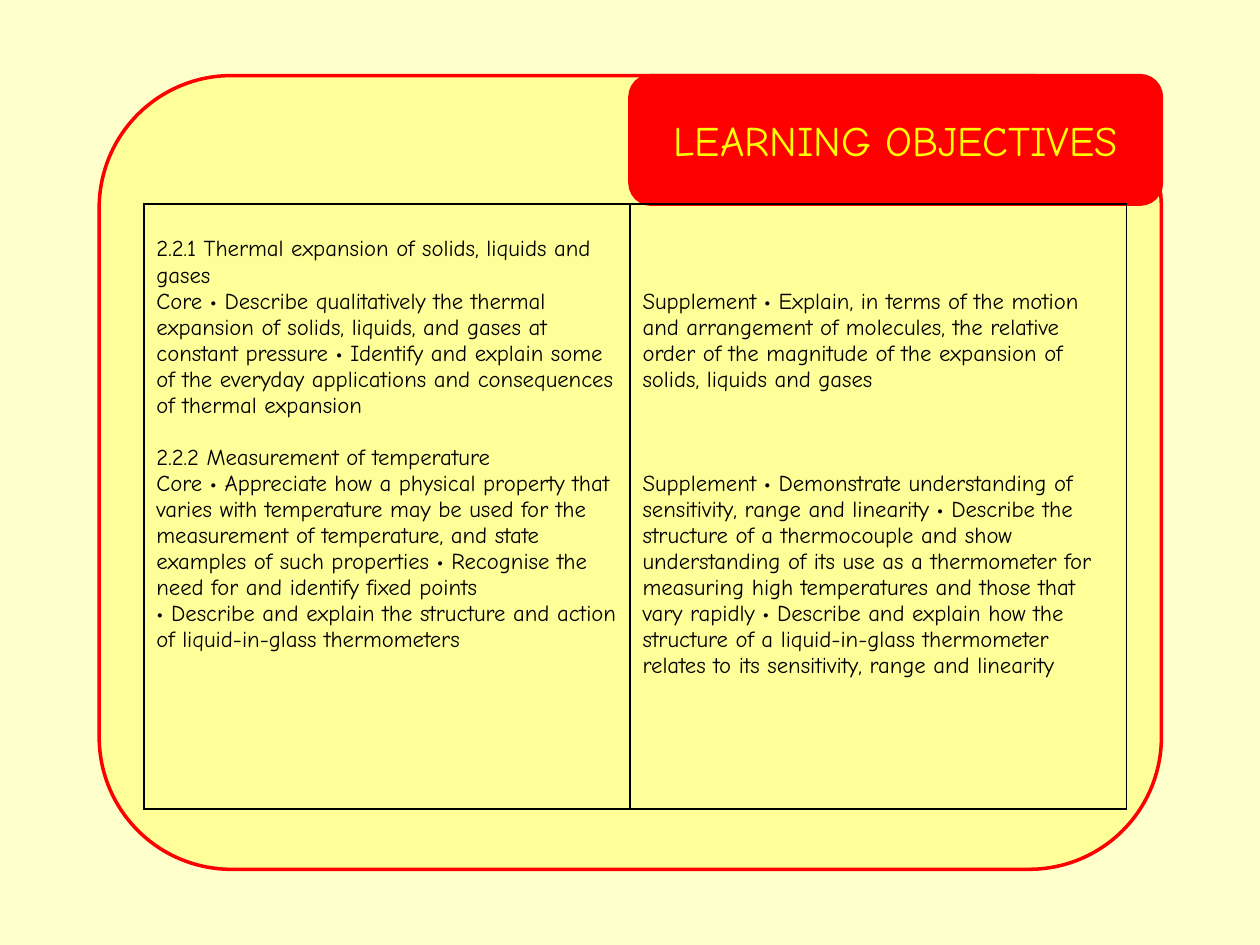
import pptx
import pptx.dml.color
import pptx.enum.shapes
import pptx.enum.text
import pptx.oxml
import pptx.oxml.ns
import pptx.util
from collections import namedtuple
from dataclasses import dataclass

Pt = pptx.util.Pt
Box = namedtuple("Box", "left top width height")
Entry = namedtuple("Entry", "text lines_before", defaults=(0,))


@dataclass(frozen=True)
class Theme:
    font: str = "Comic Neue"
    page: str = "FFFF99"
    backdrop: str = "FFFFCC"
    accent: str = "FF0000"
    heading: str = "FFFF00"
    ink: str = "000000"
    heading_size: float = 24
    body_size: float = 13
    body_line: float = 14.9
    outline: float = 2
    rule: float = 1


THEME = Theme()

CORE = [
    Entry("2.2.1 Thermal expansion of solids, liquids and gases", 1),
    Entry("Core • Describe qualitatively the thermal expansion of solids, liquids, and gases "
          "at constant pressure • Identify and explain some of the everyday applications and "
          "consequences of thermal expansion"),
    Entry("2.2.2 Measurement of temperature", 1),
    Entry("Core • Appreciate how a physical property that varies with temperature may be used "
          "for the measurement of temperature, and state examples of such properties "
          "• Recognise the need for and identify fixed points"),
    Entry("• Describe and explain the structure and action of liquid-in-glass thermometers"),
]
SUPPLEMENT = [
    Entry("Supplement • Explain, in terms of the motion and arrangement of molecules, the "
          "relative order of the magnitude of the expansion of solids, liquids and gases", 3),
    Entry("Supplement • Demonstrate understanding of sensitivity, range and linearity "
          "• Describe the structure of a thermocouple and show understanding of its use as a "
          "thermometer for measuring high temperatures and those that vary rapidly "
          "• Describe and explain how the structure of a liquid-in-glass thermometer relates "
          "to its sensitivity, range and linearity", 3),
]


def color(value):
    return pptx.dml.color.RGBColor.from_string(value)


def write(paragraph, text, *, size, ink, align=pptx.enum.text.PP_ALIGN.LEFT, before=0):
    paragraph.alignment = align
    paragraph.space_before = Pt(before)
    run = paragraph.add_run()
    run.text = text
    run.font.name = THEME.font
    run.font.size = Pt(size)
    run.font.color.rgb = color(ink)


def add_panel(slide, box, kind, fill, line=None):
    panel = slide.shapes.add_shape(kind, *map(Pt, box))
    panel.shadow.inherit = False
    panel.fill.solid()
    panel.fill.fore_color.rgb = color(fill)
    if line:
        panel.line.color.rgb = color(line)
        panel.line.width = Pt(THEME.outline)
    else:
        panel.line.fill.background()


def add_frame(slide, page, card):
    shapes = pptx.enum.shapes.MSO_SHAPE
    add_panel(slide, page, shapes.RECTANGLE, THEME.backdrop)
    add_panel(slide, card, shapes.ROUNDED_RECTANGLE, THEME.page, THEME.accent)


def add_heading(slide, box, text):
    add_panel(slide, box, pptx.enum.shapes.MSO_SHAPE.ROUNDED_RECTANGLE,
              THEME.accent, THEME.accent)
    title = slide.shapes.title
    title.left, title.top, title.width, title.height = map(Pt, box)
    title.text_frame.vertical_anchor = pptx.enum.text.MSO_ANCHOR.MIDDLE
    write(title.text_frame.paragraphs[0], text, size=THEME.heading_size,
          ink=THEME.heading, align=pptx.enum.text.PP_ALIGN.CENTER)
    slide.shapes.element.append(title.element)


def rule_cell(cell):
    properties = cell._tc.get_or_add_tcPr()
    for position, side in enumerate(("lnL", "lnR", "lnT", "lnB")):
        properties.insert(position, pptx.oxml.parse_xml(
            f'<a:{side} {pptx.oxml.ns.nsdecls("a")} w="{Pt(THEME.rule)}">'
            f'<a:solidFill><a:srgbClr val="{THEME.ink}"/></a:solidFill></a:{side}>'))


def add_objectives(slide, box, columns, first_width):
    table = slide.shapes.add_table(1, len(columns), *map(Pt, box)).table
    table.first_row = False
    table.horz_banding = False
    widths = (first_width, box.width - first_width)
    for column, width, cell, entries in zip(table.columns, widths,
                                            table.rows[0].cells, columns):
        column.width = Pt(width)
        cell.fill.background()
        rule_cell(cell)
        cell.margin_top = Pt(3.6 + entries[0].lines_before * THEME.body_line)
        for index, entry in enumerate(entries):
            frame = cell.text_frame
            paragraph = frame.add_paragraph() if index else frame.paragraphs[0]
            write(paragraph, entry.text, size=THEME.body_size, ink=THEME.ink,
                  before=entry.lines_before * THEME.body_line if index else 0)


def main():
    deck = pptx.Presentation()
    page = Box(0, 0, 720, 540)
    deck.slide_width, deck.slide_height = Pt(page.width), Pt(page.height)
    slide = deck.slides.add_slide(deck.slide_layouts[5])
    slide.background.fill.solid()
    slide.background.fill.fore_color.rgb = color(THEME.page)

    card = Box(56.7, 43.2, 607, 453.6)
    heading = Box(360, card.top, card.left + card.width - 360, 73.5)
    objectives = Box(82.2, heading.top + heading.height, 561.6, 345.6)
    add_frame(slide, page, card)
    add_heading(slide, heading, "LEARNING OBJECTIVES")
    add_objectives(slide, objectives, (CORE, SUPPLEMENT), heading.left - objectives.left)
    deck.save("out.pptx")


if __name__ == "__main__":
    main()
